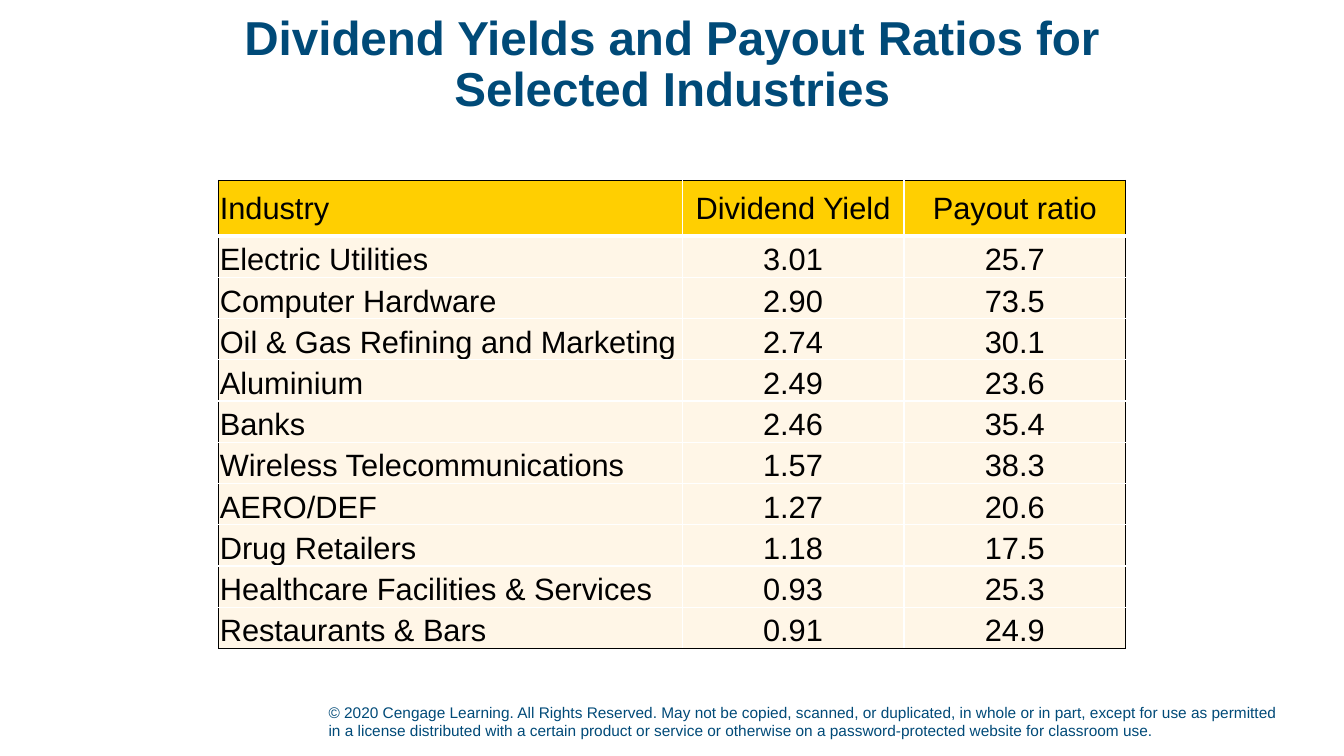
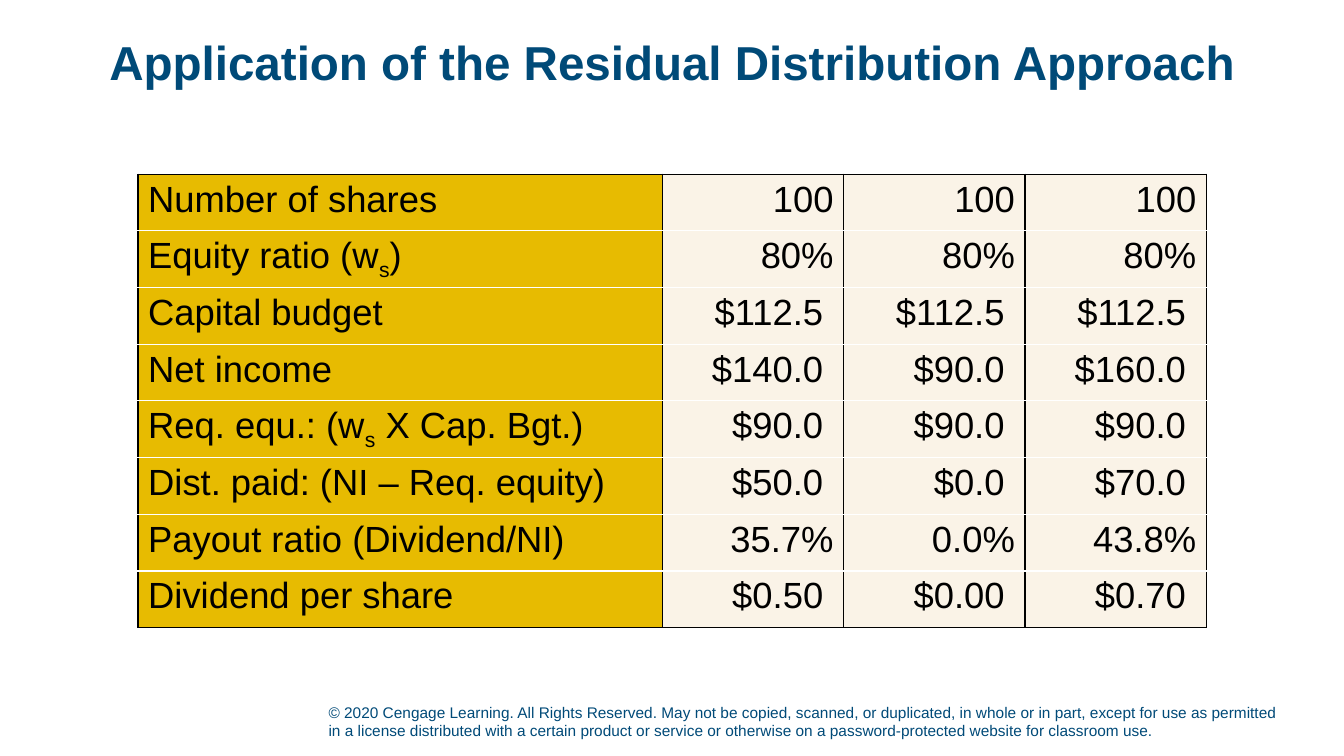
from pptx import Presentation
from pptx.dml.color import RGBColor
from pptx.enum.text import MSO_ANCHOR, MSO_AUTO_SIZE, PP_ALIGN
from pptx.oxml.ns import qn
from pptx.util import Cm, Pt
from lxml.etree import SubElement

NAVY = RGBColor(0x00, 0x4A, 0x78)
BLACK = RGBColor(0x00, 0x00, 0x00)
WHITE = RGBColor(0xFF, 0xFF, 0xFF)
YELLOW = RGBColor(0xFF, 0xCF, 0x01)
CREAM = RGBColor(0xFF, 0xF6, 0xE7)
GOLD = RGBColor(0xE7, 0xBB, 0x01)
IVORY = RGBColor(0xFA, 0xF3, 0xE7)

FONT = "Arial"
TITLE_FONT = {"name": FONT, "size": Pt(34), "bold": True}
FOOTER_FONT = {"name": FONT, "size": Pt(11)}

# Boxes: left, top, width, height
TITLE_BOX = (Cm(2.34), Cm(0.38), Cm(29.21), Cm(2.54))
FOOTER_BOX = (Cm(8.03), Cm(17.5), Cm(24.46), Cm(1.27))
INDUSTRY_BOX = (Cm(5.51), Cm(4.55), Cm(22.86), Cm(11.79))
RESIDUAL_BOX = (Cm(3.48), Cm(4.39), Cm(26.92), Cm(11.43))

FOOTER = (
    "© 2020 Cengage Learning. All Rights Reserved. May not be copied, scanned, "
    "or duplicated, in whole or in part, except for use as permitted in a license "
    "distributed with a certain product or service or otherwise on a "
    "password-protected website for classroom use."
)

INDUSTRIES = [
    ("Industry", "Dividend Yield", "Payout ratio"),
    ("Electric Utilities", "3.01", "25.7"),
    ("Computer Hardware", "2.90", "73.5"),
    ("Oil & Gas Refining and Marketing", "2.74", "30.1"),
    ("Aluminium", "2.49", "23.6"),
    ("Banks", "2.46", "35.4"),
    ("Wireless Telecommunications", "1.57", "38.3"),
    ("AERO/DEF", "1.27", "20.6"),
    ("Drug Retailers", "1.18", "17.5"),
    ("Healthcare Facilities & Services", "0.93", "25.3"),
    ("Restaurants & Bars", "0.91", "24.9"),
]

# Text between underscores is set as subscript
RESIDUAL = [
    ("Number of shares", "100", "100", "100"),
    ("Equity ratio (w_s_)", "80%", "80%", "80%"),
    ("Capital budget", "$112.5", "$112.5", "$112.5"),
    ("Net income", "$140.0", "$90.0", "$160.0"),
    ("Req. equ.: (w_s_ X Cap. Bgt.)", "$90.0", "$90.0", "$90.0"),
    ("Dist. paid: (NI – Req. equity)", "$50.0", "$0.0", "$70.0"),
    ("Payout ratio (Dividend/NI)", "35.7%", "0.0%", "43.8%"),
    ("Dividend per share", "$0.50", "$0.00", "$0.70"),
]


def set_attrs(obj, values):
    for name, value in values.items():
        setattr(obj, name, value)


def style_font(font, values, color):
    set_attrs(font, values)
    font.color.rgb = color


def add_footer(layout, s):
    """Put the copyright line on the layout, so that every slide shows it."""
    for ph in list(layout.placeholders):
        if ph.placeholder_format.idx != 0:
            ph.element.getparent().remove(ph.element)
    box = s.shapes.add_textbox(*FOOTER_BOX)
    tf = box.text_frame
    set_attrs(tf, {"word_wrap": True, "vertical_anchor": MSO_ANCHOR.BOTTOM})
    r = tf.paragraphs[0].add_run()
    r.text = FOOTER
    style_font(r.font, FOOTER_FONT, NAVY)
    layout.shapes.element.append(box.element)


def add_title(s, lines):
    title = s.shapes.title
    set_attrs(title, dict(zip(("left", "top", "width", "height"), TITLE_BOX)))
    tf = title.text_frame
    set_attrs(tf, {"word_wrap": True, "auto_size": MSO_AUTO_SIZE.NONE,
                   "vertical_anchor": MSO_ANCHOR.MIDDLE})
    p = tf.paragraphs[0]
    set_attrs(p, {"alignment": PP_ALIGN.CENTER, "line_spacing": 0.9})
    style_font(p.font, TITLE_FONT, NAVY)
    for i, line in enumerate(lines):
        if i:
            p.add_line_break()
        r = p.add_run()
        r.text = line
        style_font(r.font, TITLE_FONT, NAVY)


def set_borders(cell, sides):
    """Draw the sides, given as (colour, points) for left, right, top, bottom."""
    tc_pr = cell._tc.get_or_add_tcPr()
    for tag, (color, width) in zip(("a:lnL", "a:lnR", "a:lnT", "a:lnB"), sides):
        ln = SubElement(tc_pr, qn(tag), w=str(Pt(width)))
        fill = SubElement(ln, qn("a:solidFill"))
        SubElement(fill, qn("a:srgbClr"), val=str(color))


def fill_cell(cell, text, fill, size, align, attrs):
    set_attrs(cell, attrs)
    cell.fill.solid()
    cell.fill.fore_color.rgb = fill
    p = cell.text_frame.paragraphs[0]
    p.alignment = align
    for i, part in enumerate(text.split("_")):
        r = p.add_run()
        r.text = part
        style_font(r.font, {"name": FONT, "size": Pt(size)}, BLACK)
        if i % 2:
            r._r.get_or_add_rPr().set("baseline", "-25000")


def add_grid(s, box, rows, label_width, inner_color, head_height=None):
    """Add a plain table: a label column, equal value columns, framed in black."""
    n_rows, n_cols = len(rows), len(rows[0])
    table = s.shapes.add_table(n_rows, n_cols, *box).table
    set_attrs(table, {"first_row": False, "horz_banding": False})
    width, height = box[2:]
    for c, col in enumerate(table.columns):
        col.width = int((width - label_width) / (n_cols - 1)) if c else label_width
    head = head_height or int(height / n_rows)
    for i, row in enumerate(table.rows):
        row.height = int((height - head) / (n_rows - 1)) if i else head

    # A rule between two rows is thick only under a separate header
    frame, column_rule = (BLACK, 1), (inner_color, 1)
    row_rules = [frame] + [(WHITE, 1)] * (n_rows - 1) + [frame]
    if head_height:
        row_rules[1] = (WHITE, 3)
    column_rules = [frame] + [column_rule] * (n_cols - 1) + [frame]
    for i in range(n_rows):
        for c in range(n_cols):
            set_borders(table.cell(i, c), column_rules[c:c + 2] + row_rules[i:i + 2])
    return table


def industry_slide(s):
    add_title(s, ["Dividend Yields and Payout Ratios for", "Selected Industries"])
    table = add_grid(s, INDUSTRY_BOX, INDUSTRIES, Cm(11.68), WHITE, Cm(1.4))
    margins = {"margin_left": Cm(0.03), "margin_right": Cm(0.03),
               "margin_top": Cm(0.03), "margin_bottom": 0}
    for i, row in enumerate(INDUSTRIES):
        anchor = MSO_ANCHOR.BOTTOM if i else MSO_ANCHOR.MIDDLE
        for c, text in enumerate(row):
            fill_cell(table.cell(i, c), text, CREAM if i else YELLOW, 22,
                      PP_ALIGN.CENTER if c else PP_ALIGN.LEFT,
                      {"vertical_anchor": anchor, **margins})


def residual_slide(s):
    add_title(s, ["Application of the Residual Distribution Approach"])
    table = add_grid(s, RESIDUAL_BOX, RESIDUAL, Cm(13.21), BLACK)
    for i, row in enumerate(RESIDUAL):
        for c, text in enumerate(row):
            # Dollar amounts stand a little further in from the right
            right = Cm(0.51) if text.startswith("$") else Cm(0.25)
            fill_cell(table.cell(i, c), text, IVORY if c else GOLD, 26,
                      PP_ALIGN.RIGHT if c else PP_ALIGN.LEFT,
                      {"vertical_anchor": MSO_ANCHOR.TOP, "margin_right": right})


def main():
    prs = Presentation()
    set_attrs(prs, {"slide_width": Cm(33.87), "slide_height": Cm(19.05)})
    layout = prs.slide_layouts.get_by_name("Title Only")
    for build in (industry_slide, residual_slide):
        build(prs.slides.add_slide(layout))
    add_footer(layout, prs.slides[0])
    prs.save("out.pptx")


if __name__ == "__main__":
    main()
